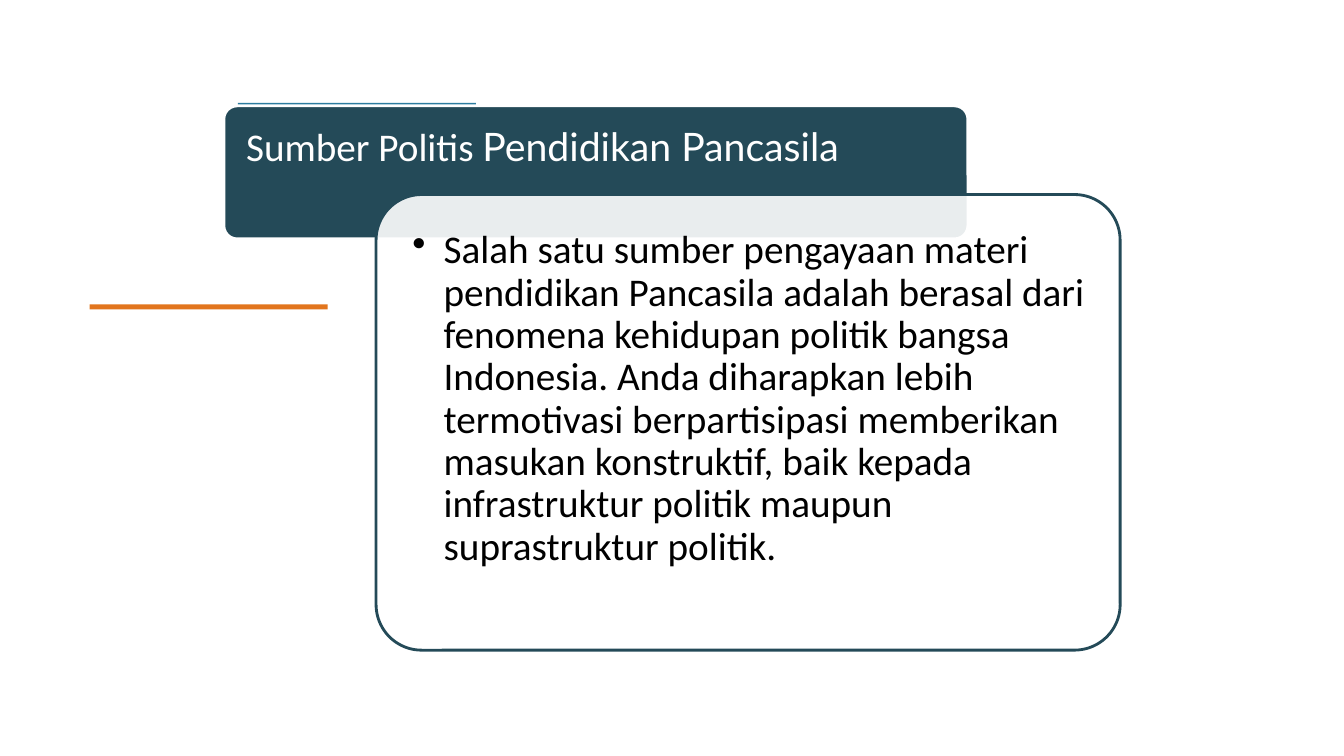
import pptx
import pptx.dml.color
import pptx.enum.shapes
import pptx.enum.text
import pptx.oxml.ns
import pptx.util
import lxml.etree

COLORS = {
    "orange": "E2751D",
    "teal": "2C7C9F",
    "navy": "244A58",
    "white": "FFFFFF",
    "black": "000000",
}
TITLE_RUNS = [("Sumber Politis ", "Calibri"), ("Pendidikan Pancasila", "Lato")]
BODY_RUNS = [(
    "Salah satu sumber pengayaan materi pendidikan Pancasila adalah berasal dari "
    "fenomena kehidupan politik bangsa Indonesia. Anda diharapkan lebih termotivasi "
    "berpartisipasi memberikan masukan konstruktif, baik kepada infrastruktur politik "
    "maupun suprastruktur politik.", "Calibri")]

SLIDE_SIZE = (1333, 750)
RULES = [("orange", (89, 302, 236, 5)), ("teal", (236, 102, 236, 5))]
BANNER = (222, 105, 738, 132)
TITLE = (222, 105, 738, 88)
CARD = (373, 193, 738, 452)
BODY = (387, 206, 711, 425)
TITLE_INSETS = (22, 22, 22, 12)
BODY_INSETS = (22, 22, 20, 22)
BULLET_INDENT = 31
CARD_OPACITY = 90
FRAME_FORMAT = {
    "word_wrap": True,
    "auto_size": pptx.enum.text.MSO_AUTO_SIZE.NONE,
    "vertical_anchor": pptx.enum.text.MSO_ANCHOR.TOP,
}
PARAGRAPH_FORMAT = {
    "alignment": pptx.enum.text.PP_ALIGN.LEFT,
    "line_spacing": 0.9,
    "space_before": pptx.util.Pt(0),
}
FONT_FORMAT = {"size": pptx.util.Pt(28), "bold": False}


def px(length):
    return pptx.util.Emu(length * 9144)


def color(name):
    return pptx.dml.color.RGBColor.from_string(COLORS[name])


def apply(target, values):
    for name, value in values.items():
        setattr(target, name, value)


def place(shape, box):
    apply(shape, dict(zip(("left", "top", "width", "height"), map(px, box))))


def add_block(slide, kind, box, fill, line=None):
    shape = slide.shapes.add_shape(kind, *map(px, box))
    shape.shadow.inherit = False
    shape.fill.solid()
    shape.fill.fore_color.rgb = color(fill)
    if line:
        shape.line.color.rgb = color(line)
        shape.line.width = pptx.util.Pt(2)
        shape.adjustments[0] = 0.1
    else:
        shape.line.fill.background()
    return shape


def write_text(shape, runs, insets, text_color):
    frame = shape.text_frame
    apply(frame, FRAME_FORMAT)
    sides = ("margin_left", "margin_top", "margin_right", "margin_bottom")
    apply(frame, dict(zip(sides, map(px, insets))))
    paragraph = frame.paragraphs[0]
    apply(paragraph, PARAGRAPH_FORMAT)
    for text, font_name in runs:
        run = paragraph.add_run()
        run.text = text
        apply(run.font, FONT_FORMAT | {"name": font_name})
        run.font.color.rgb = color(text_color)
    return paragraph


def add_bullet(paragraph):
    properties = paragraph._p.get_or_add_pPr()
    properties.set("marL", str(px(BULLET_INDENT)))
    properties.set("indent", str(-px(BULLET_INDENT)))
    bullet = lxml.etree.SubElement(properties, pptx.oxml.ns.qn("a:buChar"))
    bullet.set("char", "•")


def set_opacity(shape, percent):
    fill_color = shape.element.spPr.find(".//" + pptx.oxml.ns.qn("a:srgbClr"))
    alpha = lxml.etree.SubElement(fill_color, pptx.oxml.ns.qn("a:alpha"))
    alpha.set("val", str(percent * 1000))


def main():
    presentation = pptx.Presentation()
    presentation.slide_width, presentation.slide_height = map(px, SLIDE_SIZE)
    slide = presentation.slides.add_slide(presentation.slide_layouts.get_by_name("Title Only"))
    shape_type = pptx.enum.shapes.MSO_SHAPE

    for fill, box in RULES:
        add_block(slide, shape_type.RECTANGLE, box, fill)
    banner = add_block(slide, shape_type.ROUNDED_RECTANGLE, BANNER, "navy", "white")

    title = slide.shapes.title
    place(title, TITLE)
    write_text(title, TITLE_RUNS, TITLE_INSETS, "white")
    banner.element.addnext(title.element)

    card = add_block(slide, shape_type.ROUNDED_RECTANGLE, CARD, "white", "navy")
    set_opacity(card, CARD_OPACITY)

    body = slide.shapes.add_textbox(*map(px, BODY))
    add_bullet(write_text(body, BODY_RUNS, BODY_INSETS, "black"))

    presentation.save("out.pptx")


if __name__ == "__main__":
    main()
